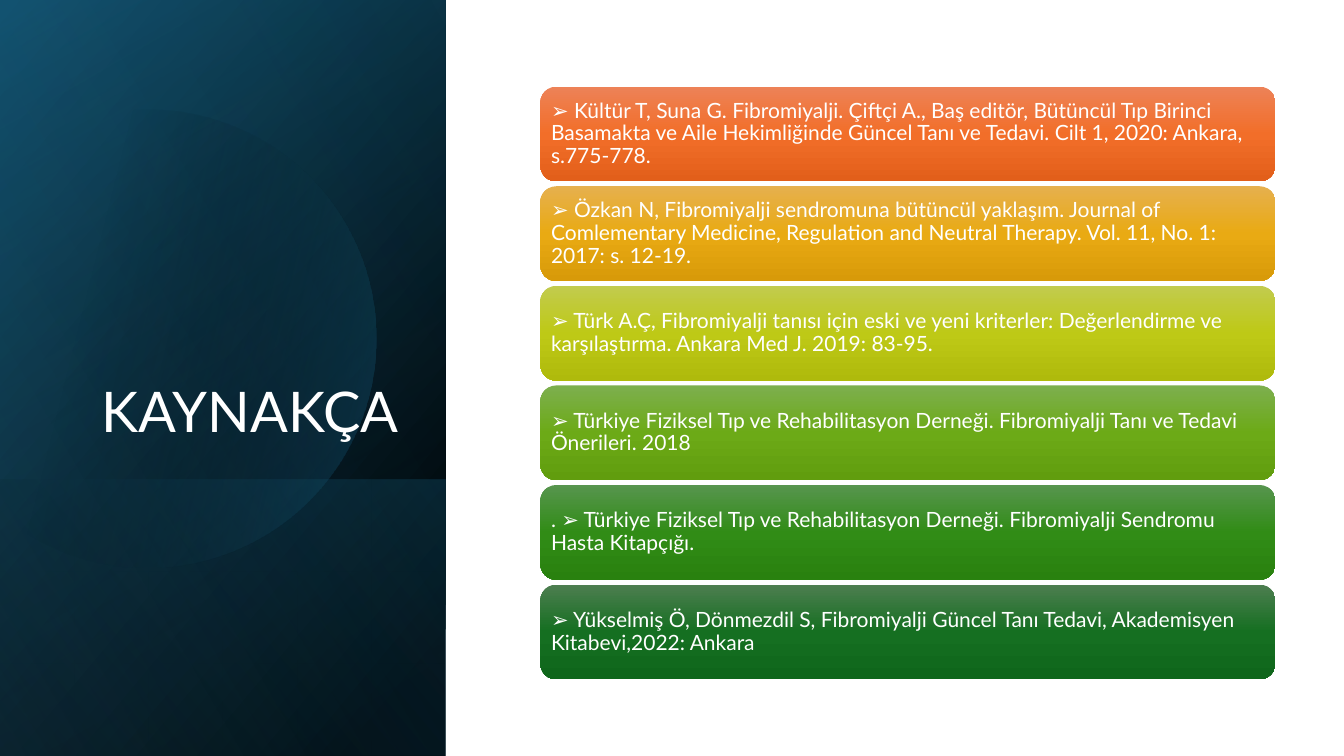
import math

import lxml.etree
import pptx
import pptx.dml.color
import pptx.enum.shapes
import pptx.enum.text
import pptx.oxml.ns
import pptx.util

Inches = pptx.util.Inches
RGBColor = pptx.dml.color.RGBColor
Shape = pptx.enum.shapes.MSO_SHAPE
Align = pptx.enum.text.PP_ALIGN
Anchor = pptx.enum.text.MSO_ANCHOR
qn = pptx.oxml.ns.qn

FONT = "Lato"
WHITE = RGBColor(0xFF, 0xFF, 0xFF)
BLACK = RGBColor(0x00, 0x00, 0x00)
DEEP_BLUE = RGBColor(0x10, 0x48, 0x62)
TEAL = RGBColor(0x15, 0x60, 0x82)
SKY = RGBColor(0x46, 0xB1, 0xE1)
ORANGES = RGBColor(0xED, 0x82, 0x57), RGBColor(0xF2, 0x6E, 0x29), RGBColor(0xE2, 0x5F, 0x1A)
AMBERS = RGBColor(0xE6, 0xB0, 0x4E), RGBColor(0xE9, 0xAA, 0x13), RGBColor(0xD8, 0x9A, 0x09)
LIMES = RGBColor(0xC2, 0xCB, 0x4E), RGBColor(0xBE, 0xC9, 0x16), RGBColor(0xAF, 0xBA, 0x0C)
LEAVES = RGBColor(0x7D, 0xAF, 0x4E), RGBColor(0x6C, 0xAA, 0x17), RGBColor(0x61, 0x9D, 0x0E)
GREENS = RGBColor(0x57, 0x95, 0x4E), RGBColor(0x31, 0x8C, 0x16), RGBColor(0x29, 0x81, 0x0F)
FORESTS = RGBColor(0x4D, 0x7E, 0x50), RGBColor(0x15, 0x6F, 0x21), RGBColor(0x0F, 0x66, 0x1B)

REFERENCES = [
    ("➢ Kültür T, Suna G. Fibromiyalji. Çiftçi A., Baş editör, Bütüncül Tıp Birinci Basamakta ve "
     "Aile Hekimliğinde Güncel Tanı ve Tedavi. Cilt 1, 2020: Ankara, s.775-778.", ORANGES),
    ("➢ Özkan N, Fibromiyalji sendromuna bütüncül yaklaşım. Journal of Comlementary Medicine, "
     "Regulation and Neutral Therapy. Vol. 11, No. 1: 2017: s. 12-19.", AMBERS),
    ("➢ Türk A.Ç, Fibromiyalji tanısı için eski ve yeni kriterler: Değerlendirme ve "
     "karşılaştırma. Ankara Med J. 2019: 83-95.", LIMES),
    ("➢ Türkiye Fiziksel Tıp ve Rehabilitasyon Derneği. Fibromiyalji Tanı ve Tedavi "
     "Önerileri. 2018", LEAVES),
    (". ➢ Türkiye Fiziksel Tıp ve Rehabilitasyon Derneği. Fibromiyalji Sendromu "
     "Hasta Kitapçığı.", GREENS),
    ("➢ Yükselmiş Ö, Dönmezdil S, Fibromiyalji Güncel Tanı Tedavi, Akademisyen "
     "Kitabevi,2022: Ankara", FORESTS),
]


def paint_gradient(shape, stops, angle):
    """Fill a shape with (position, colour, opacity) stops along a clockwise angle."""
    shape.shadow.inherit = False
    shape.line.fill.background()
    shape.fill.gradient()
    shape.fill.gradient_angle = 360 - angle
    stop_list = shape._element.spPr.find(qn("a:gradFill")).find(qn("a:gsLst"))
    for stop in list(stop_list):
        stop_list.remove(stop)
    for position, colour, opacity in stops:
        stop = lxml.etree.SubElement(stop_list, qn("a:gs"), pos=str(position * 1000))
        tint = lxml.etree.SubElement(stop, qn("a:srgbClr"), val=str(colour))
        if opacity < 100:
            lxml.etree.SubElement(tint, qn("a:alpha"), val=str(opacity * 1000))


def write_text(frame, text, size, align, anchor):
    """Write one white paragraph into a text frame."""
    frame.word_wrap = True
    frame.auto_size = pptx.enum.text.MSO_AUTO_SIZE.NONE
    frame.vertical_anchor = anchor
    paragraph = frame.paragraphs[0]
    paragraph.alignment = align
    paragraph.line_spacing = 0.9
    run = paragraph.add_run()
    run.text = text
    run.font.name = FONT
    run.font.size = pptx.util.Pt(size)
    run.font.color.rgb = WHITE


def add_wash(slide, left, top, width, height, stops, angle):
    """Cover a box with a mirrored rectangle turned by a quarter."""
    wash = slide.shapes.add_shape(
        Shape.RECTANGLE, Inches(left + (width - height) / 2), Inches(top + (height - width) / 2),
        Inches(height), Inches(width))
    wash.rotation = 90
    wash._element.spPr.find(qn("a:xfrm")).set("flipH", "1")
    paint_gradient(wash, stops, angle)


def add_disc(slide, left, centre_x, centre_y, radius):
    """Draw a faint disc cut off by a vertical edge at left."""
    limit = math.acos((left - centre_x) / radius)
    steps = 120
    angles = [limit * (2 * step / steps - 1) for step in range(steps + 1)]
    rim = [(Inches(centre_x + radius * math.cos(angle)), Inches(centre_y + radius * math.sin(angle)))
           for angle in angles]
    builder = slide.shapes.build_freeform(*rim[0])
    builder.add_line_segments(rim[1:], close=True)
    paint_gradient(builder.convert_to_shape(), [(29, BLACK, 0), (100, TEAL, 43)], 14)


def add_title_panel(slide, left, top, width, height):
    """Build the dark panel with its title."""
    shade_height = 2.74
    add_wash(slide, left, top, width, height, [(8, BLACK, 100), (100, DEEP_BLUE, 100)], 50)
    add_wash(slide, left, top, width, height, [(0, BLACK, 0), (99, TEAL, 46)], 30)
    add_wash(slide, left, top + height - shade_height, width, shade_height,
             [(2, TEAL, 29), (100, BLACK, 30)], 130)
    add_disc(slide, left - 0.15, left + 1.46, top + 3.36, 2.27)
    add_wash(slide, left, top, width, height, [(0, BLACK, 0), (99, SKY, 11)], 120)
    title = slide.shapes.title
    title.left, title.top = Inches(left + 0.64), Inches(top + 1.84)
    title.width, title.height = Inches(3.41), Inches(2.62)
    write_text(title.text_frame, "KAYNAKÇA", 40, Align.RIGHT, Anchor.BOTTOM)
    slide.shapes._spTree.append(title._element)


def add_reference_list(slide, left, top, width, height):
    """Stack the reference cards evenly in a box."""
    card_height = 0.94
    pitch = (height - card_height) / (len(REFERENCES) - 1)
    for index, (reference, shades) in enumerate(REFERENCES):
        card = slide.shapes.add_shape(
            Shape.ROUNDED_RECTANGLE, Inches(left), Inches(top + index * pitch),
            Inches(width), Inches(card_height))
        paint_gradient(card, [(pos, shade, 100) for pos, shade in zip((0, 50, 100), shades)], 90)
        frame = card.text_frame
        frame.margin_left = frame.margin_right = Inches(0.06)
        frame.margin_top = frame.margin_bottom = Inches(0.06)
        write_text(frame, reference, 15, Align.LEFT, Anchor.MIDDLE)


def main():
    """Build the bibliography slide and save it."""
    deck = pptx.Presentation()
    deck.slide_width, deck.slide_height = Inches(13.33), Inches(7.5)
    slide = deck.slides.add_slide(deck.slide_layouts[5])
    add_title_panel(slide, 0, 0, 4.42, 7.5)
    add_reference_list(slide, 5.36, 0.86, 7.29, 5.88)
    deck.save("out.pptx")


if __name__ == "__main__":
    main()
